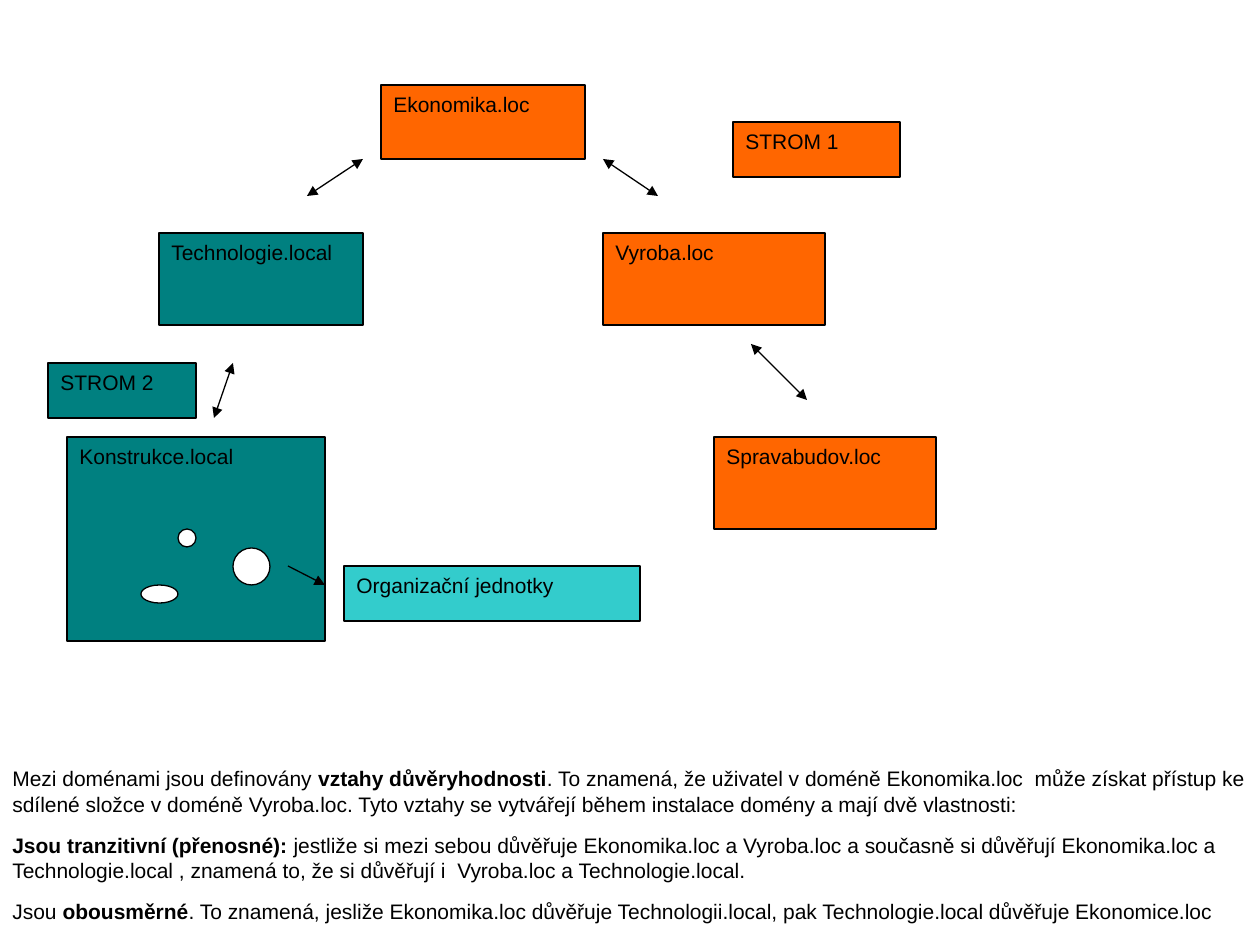
from dataclasses import dataclass
from typing import NamedTuple

from pptx import Presentation
from pptx.dml.color import RGBColor
from pptx.enum.shapes import MSO_CONNECTOR as Link, MSO_SHAPE as Kind
from pptx.enum.text import MSO_ANCHOR as Anchor, PP_ALIGN as Align
from pptx.oxml import parse_xml
from pptx.oxml.ns import nsdecls
from pptx.util import Emu, Pt

SCALE = 914400 / 126


@dataclass(frozen=True)
class Theme:
    orange: str = "FF6600"
    teal: str = "008080"
    aqua: str = "33CCCC"
    white: str = "FFFFFF"
    ink: str = "000000"
    font: str = "Arial"
    size: float = 12
    gap: float = 9.2
    line: float = 0.75


class Box(NamedTuple):
    left: int
    top: int
    width: int
    height: int
    fill: str
    text: str = ""


class Arrow(NamedTuple):
    x1: int
    y1: int
    x2: int
    y2: int
    ends: tuple = ("head", "tail")


class Part(NamedTuple):
    text: str
    bold: bool = False


THEME = Theme()

DOMAINS = [
    Box(381, 85, 204, 74, THEME.orange, "Ekonomika.loc"),
    Box(603, 233, 222, 92, THEME.orange, "Vyroba.loc"),
    Box(714, 437, 222, 92, THEME.orange, "Spravabudov.loc"),
    Box(159, 233, 204, 92, THEME.teal, "Technologie.local"),
    Box(67, 437, 258, 204, THEME.teal, "Konstrukce.local"),
]
TRUSTS = [
    Arrow(603, 159, 658, 196),
    Arrow(751, 344, 807, 400),
    Arrow(363, 159, 307, 196),
    Arrow(233, 363, 214, 418),
]
UNITS = [
    Box(178, 529, 18, 18, THEME.white),
    Box(233, 548, 37, 37, THEME.white),
    Box(141, 585, 37, 18, THEME.white),
]
LABELS = [
    Box(344, 566, 296, 55, THEME.aqua, "Organizační jednotky"),
    Box(733, 122, 167, 55, THEME.orange, "STROM 1"),
    Box(48, 363, 148, 55, THEME.teal, "STROM 2"),
]
POINTER = Arrow(288, 566, 325, 585, ("tail",))
NOTES = [
    [
        Part("Mezi doménami jsou definovány "),
        Part("vztahy důvěryhodnosti", True),
        Part(". To znamená, že uživatel v doméně Ekonomika.loc  může získat "
             "přístup ke sdílené složce v doméně Vyroba.loc. Tyto vztahy se "
             "vytvářejí během instalace domény a mají dvě vlastnosti:"),
    ],
    [
        Part("Jsou tranzitivní (přenosné):", True),
        Part(" jestliže si mezi sebou důvěřuje Ekonomika.loc a Vyroba.loc a "
             "současně si důvěřují Ekonomika.loc a Technologie.local , znamená "
             "to, že si důvěřují i  Vyroba.loc a Technologie.local."),
    ],
    [
        Part("Jsou "),
        Part("obousměrné", True),
        Part(". To znamená, jesliže Ekonomika.loc důvěřuje Technologii.local, "
             "pak Technologie.local důvěřuje Ekonomice.loc"),
    ],
]


def px(*nums: int) -> list[Emu]:
    return [Emu(round(num * SCALE)) for num in nums]


def assign(item, values: dict) -> None:
    for name, value in values.items():
        setattr(item, name, value)


def write(para, part: Part) -> None:
    run = para.add_run()
    run.text = part.text
    assign(run.font, {"name": THEME.font, "size": Pt(THEME.size), "bold": part.bold})
    run.font.color.rgb = RGBColor.from_string(THEME.ink)


def stroke(line) -> None:
    line.width = Pt(THEME.line)
    line.color.rgb = RGBColor.from_string(THEME.ink)


def draw_box(shapes, box: Box, kind: Kind = Kind.RECTANGLE) -> None:
    shape = shapes.add_shape(kind, *px(*box[:4]))
    shape.shadow.inherit = False
    shape.fill.solid()
    shape.fill.fore_color.rgb = RGBColor.from_string(box.fill)
    stroke(shape.line)
    if box.text:
        frame = shape.text_frame
        assign(frame, {"vertical_anchor": Anchor.TOP, "word_wrap": True})
        para = frame.paragraphs[0]
        para.alignment = Align.LEFT
        write(para, Part(box.text))


def draw_arrow(shapes, arrow: Arrow) -> None:
    link = shapes.add_connector(Link.STRAIGHT, *px(*arrow[:4]))
    stroke(link.line)
    line = link.line._get_or_add_ln()
    for end in arrow.ends:
        line.append(parse_xml(f'<a:{end}End {nsdecls("a")} type="triangle"/>'))
    link._element.spPr.append(parse_xml(f'<a:effectLst {nsdecls("a")}/>'))


def draw_notes(shapes, notes: list[list[Part]]) -> None:
    frame = shapes.add_textbox(*px(0, 758, 1260, 174)).text_frame
    assign(frame, {"word_wrap": True, "vertical_anchor": Anchor.MIDDLE})
    for num, parts in enumerate(notes):
        para = frame.add_paragraph() if num else frame.paragraphs[0]
        para.space_before = Pt(THEME.gap if num else 0)
        for part in parts:
            write(para, part)


def main() -> None:
    """Build the slide of domain trees and their trusts."""
    deck = Presentation()
    wide, high = px(1260, 945)
    assign(deck, {"slide_width": wide, "slide_height": high})
    slide = deck.slides.add_slide(deck.slide_layouts[6])
    forest = slide.shapes.add_group_shape().shapes
    for box in DOMAINS:
        draw_box(forest, box)
    for arrow in TRUSTS:
        draw_arrow(forest, arrow)
    for unit in UNITS:
        draw_box(forest, unit, Kind.OVAL)
    for label in LABELS:
        draw_box(forest, label)
    draw_arrow(forest, POINTER)
    draw_notes(slide.shapes, NOTES)
    deck.save("out.pptx")


if __name__ == "__main__":
    main()
